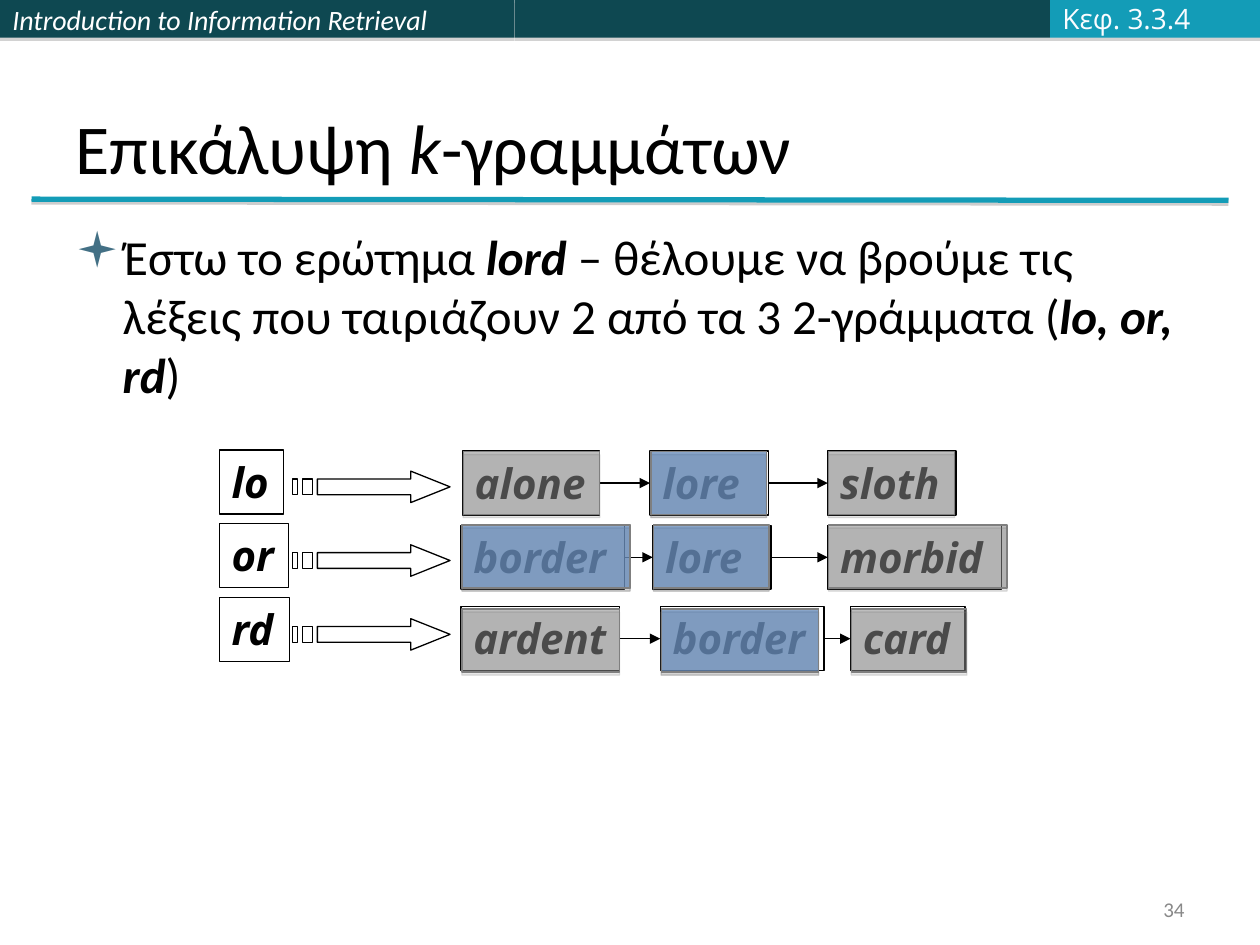
from lxml.etree import SubElement
from pptx import Presentation
from pptx.dml.color import RGBColor
from pptx.enum.shapes import MSO_CONNECTOR as CONNECTOR, MSO_SHAPE as SHAPE
from pptx.enum.text import MSO_ANCHOR as ANCHOR, MSO_AUTO_SIZE as AUTO, PP_ALIGN as ALIGN
from pptx.oxml.ns import qn
from pptx.util import Pt

BLACK = RGBColor(0x00, 0x00, 0x00)
WHITE = RGBColor(0xFF, 0xFF, 0xFF)
OFF_WHITE = RGBColor(0xFB, 0xFC, 0xFF)
DARK_TEAL = RGBColor(0x0E, 0x48, 0x51)
TEAL = RGBColor(0x13, 0x9C, 0xB7)
GREY = RGBColor(0x7F, 0x7F, 0x7F)
BLUE = RGBColor(0x55, 0x8E, 0xD5)
PAGE_GREY = RGBColor(0x89, 0x89, 0x89)

BOX_HEIGHT = 36.5
POSTINGS = [
    ("lo", 36.7, 257.2, 257.8, 258,
     [("alone", 264.2, 78.5, 78, False), ("lore", 371.5, 67.7, 66, True),
      ("sloth", 473, 73.4, 72, False)]),
    ("or", 39.6, 299.3, 300.2, 300,
     [("border", 263.5, 93.6, 96, True), ("lore", 373, 67.7, 66, True),
      ("morbid", 473, 99.4, 102, False)]),
    ("rd", 40.3, 341.5, 346.7, 348,
     [("ardent", 263.5, 90.7, 90, False), ("border", 377.3, 93.6, 90, True),
      ("card", 486, 65.5, 66, False)]),
]


def write(frame, *parts, size, font="Calibri", color=BLACK, bold=False, italic=False,
          emphasis=(), align=ALIGN.LEFT, anchor=ANCHOR.TOP, wrap=True):
    frame.word_wrap = wrap
    frame.auto_size = AUTO.NONE
    frame.vertical_anchor = anchor
    paragraph = frame.paragraphs[0]
    paragraph.alignment = align
    for index, part in enumerate(parts):
        run = paragraph.add_run()
        run.text = part
        run.font.size = Pt(size)
        run.font.name = font
        run.font.color.rgb = color
        stressed = index % 2 == 1
        run.font.bold = bold or (stressed and "bold" in emphasis)
        run.font.italic = italic or (stressed and "italic" in emphasis)
    return paragraph


def add_shadow(effects, alpha, distance):
    shadow = SubElement(effects, qn("a:outerShdw"), blurRad="0",
                        dist=str(Pt(distance)), dir="5400000", rotWithShape="0")
    tint = SubElement(shadow, qn("a:srgbClr"), val="808080")
    SubElement(tint, qn("a:alpha"), val=str(alpha * 1000))


def add_text(slide, left, top, width, height):
    return slide.shapes.add_textbox(Pt(left), Pt(top), Pt(width), Pt(height)).text_frame


def add_box(slide, left, top, width, height, fill=None, line=None, opacity=100):
    box = slide.shapes.add_shape(SHAPE.RECTANGLE, Pt(left), Pt(top), Pt(width), Pt(height))
    box.shadow.inherit = False
    if line is None:
        box.line.fill.background()
    else:
        box.line.color.rgb = line
        box.line.width = Pt(0.75)
    if fill is None:
        box.fill.background()
    else:
        box.fill.solid()
        box.fill.fore_color.rgb = fill
        tint = box._element.spPr.find(qn("a:solidFill"))[0]
        SubElement(tint, qn("a:alpha"), val=str(opacity * 1000))
        add_shadow(box._element.spPr.find(qn("a:effectLst")), 35, 1.8)
    return box


def add_line(slide, start, end, color=BLACK, width=0.75, arrow=False):
    line = slide.shapes.add_connector(CONNECTOR.STRAIGHT, *map(Pt, start + end))
    line.line.color.rgb = color
    line.line.width = Pt(width)
    if arrow:
        SubElement(line.line._get_or_add_ln(), qn("a:tailEnd"), type="triangle")
    return SubElement(line._element.spPr, qn("a:effectLst"))


def add_term(slide, term, left, top, width):
    box = add_box(slide, left, top, width, BOX_HEIGHT, line=BLACK)
    write(box.text_frame, term, size=24, font="Open Sans", bold=True, italic=True, wrap=False)


def add_striped_arrow(slide, left, middle):
    def outline(points):
        return [(Pt(left + x), Pt(middle + y)) for x, y in points]

    half, head = 4.5, 9
    tip = outline([(67.5, -head), (67.5, -half), (14.2, -half), (14.2, half),
                   (67.5, half), (67.5, head), (90, 0)])
    stripes = [outline([(x, -half), (x, half), (end, half), (end, -half)])
               for x, end in ((5.7, 11.3), (0, 2.8))]
    builder = slide.shapes.build_freeform(*tip[0], scale=1)
    builder.add_line_segments(tip[1:], close=True)
    for stripe in stripes:
        builder.move_to(*stripe[0])
        builder.add_line_segments(stripe[1:], close=True)
    arrow = builder.convert_to_shape()
    arrow.shadow.inherit = False
    arrow.fill.background()
    arrow.line.color.rgb = BLACK
    arrow.line.width = Pt(0.75)


def add_posting_list(slide, gram, gram_width, gram_top, term_top, cover_top, terms):
    add_term(slide, gram, 125.3, gram_top, gram_width)
    add_striped_arrow(slide, 167.2, gram_top + 21)
    for term, left, width, _, _ in terms:
        add_term(slide, term, left, term_top, width)
    middle = term_top + BOX_HEIGHT / 2
    for (_, left, width, _, _), (_, next_left, _, _, _) in zip(terms, terms[1:]):
        add_line(slide, (left + width, middle), (next_left, middle), arrow=True)
    for _, left, _, cover_width, matched in terms:
        for color in (GREY, BLUE) if matched else (GREY,):
            add_box(slide, left + 0.5, cover_top, cover_width, 36, color, GREY, opacity=50)


def add_header(slide):
    course = add_box(slide, 0, 0, 294, 21.6, DARK_TEAL)
    write(course.text_frame, "Introduction to Information Retrieval", size=16,
          color=WHITE, italic=True, anchor=ANCHOR.MIDDLE)
    add_box(slide, 294, 0, 306, 21.6, DARK_TEAL)
    add_box(slide, 600, 0, 120, 21.6, TEAL)
    write(add_text(slide, 600, -2.9, 94.3, 26.6), "Κεφ. 3.3.4", size=16,
          font="Open Sans", color=OFF_WHITE, anchor=ANCHOR.MIDDLE, wrap=False)
    add_shadow(add_line(slide, (18, 113.8), (702, 114.5), TEAL, 3), 38, 1.6)


def add_title(slide):
    title = slide.shapes.title
    title.left, title.top, title.width, title.height = map(Pt, (36, 21.6, 648, 90))
    write(title.text_frame, "Επικάλυψη ", "k", "-γραμμάτων", size=40,
          emphasis=("italic",), anchor=ANCHOR.BOTTOM)


def add_query(slide):
    query = write(add_text(slide, 36, 126, 648, 390), "Έστω το ερώτημα ", "lord",
                  " – θέλουμε να βρούμε τις λέξεις που ταιριάζουν 2 από τα 3 2-γράμματα (",
                  "lo, or, rd", ")", size=28, emphasis=("bold", "italic"))
    query.space_before = Pt(5.6)
    properties = query._p.get_or_add_pPr()
    properties.set("marL", str(Pt(27)))
    properties.set("indent", str(Pt(-27)))
    bullet_color = SubElement(properties, qn("a:buClr"))
    SubElement(bullet_color, qn("a:srgbClr"), val="437085")
    SubElement(properties, qn("a:buFont"), typeface="Wingdings")
    SubElement(properties, qn("a:buChar"), char="▪")


def main():
    deck = Presentation()
    deck.slide_width, deck.slide_height = Pt(720), Pt(540)
    slide = deck.slides.add_slide(deck.slide_layouts[5])
    add_header(slide)
    add_title(slide)
    add_query(slide)
    for posting in POSTINGS:
        add_posting_list(slide, *posting)
    write(add_text(slide, 516, 510, 168, 19.4), "34", size=12, color=PAGE_GREY,
          align=ALIGN.RIGHT, anchor=ANCHOR.MIDDLE)
    deck.save("out.pptx")


if __name__ == "__main__":
    main()
